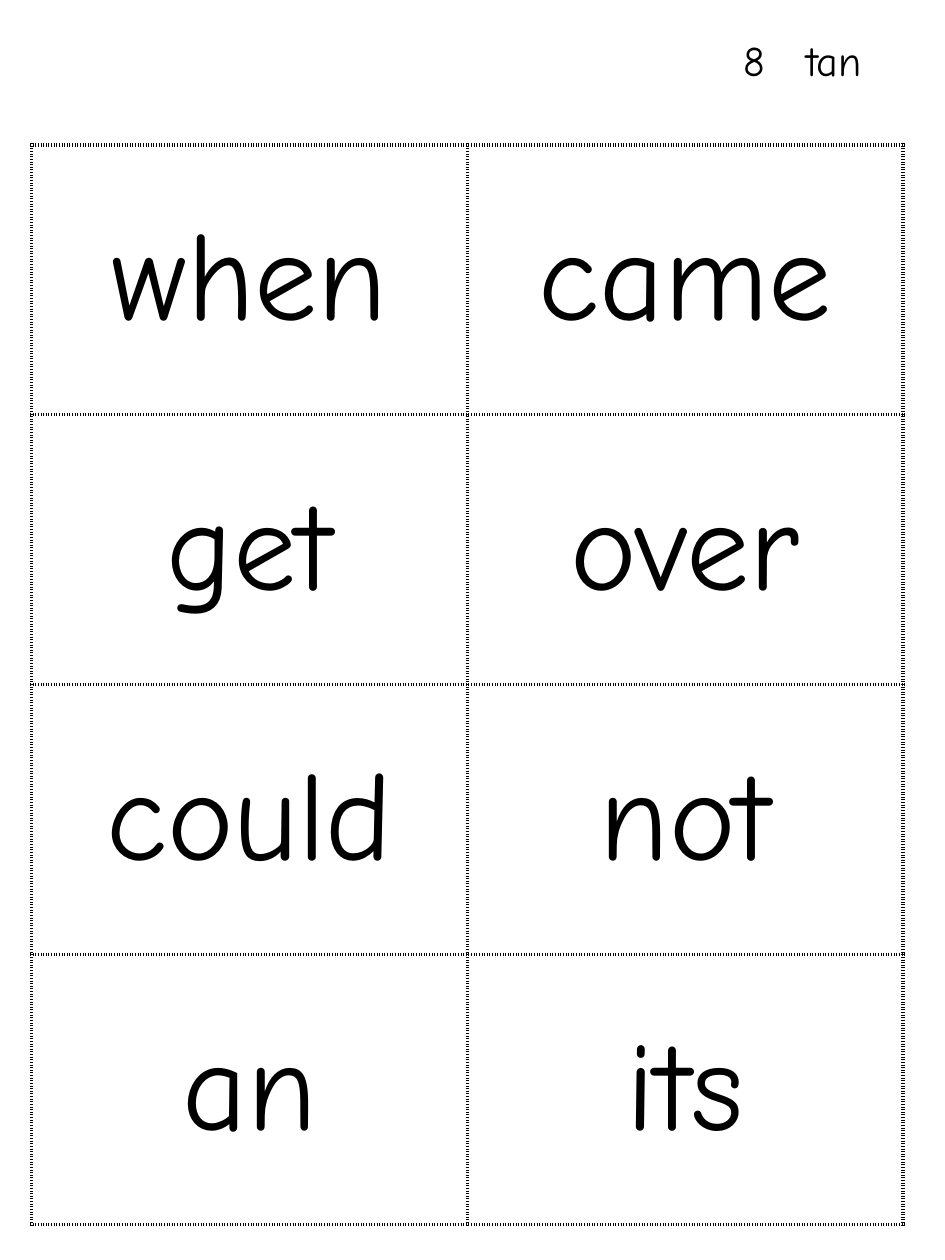
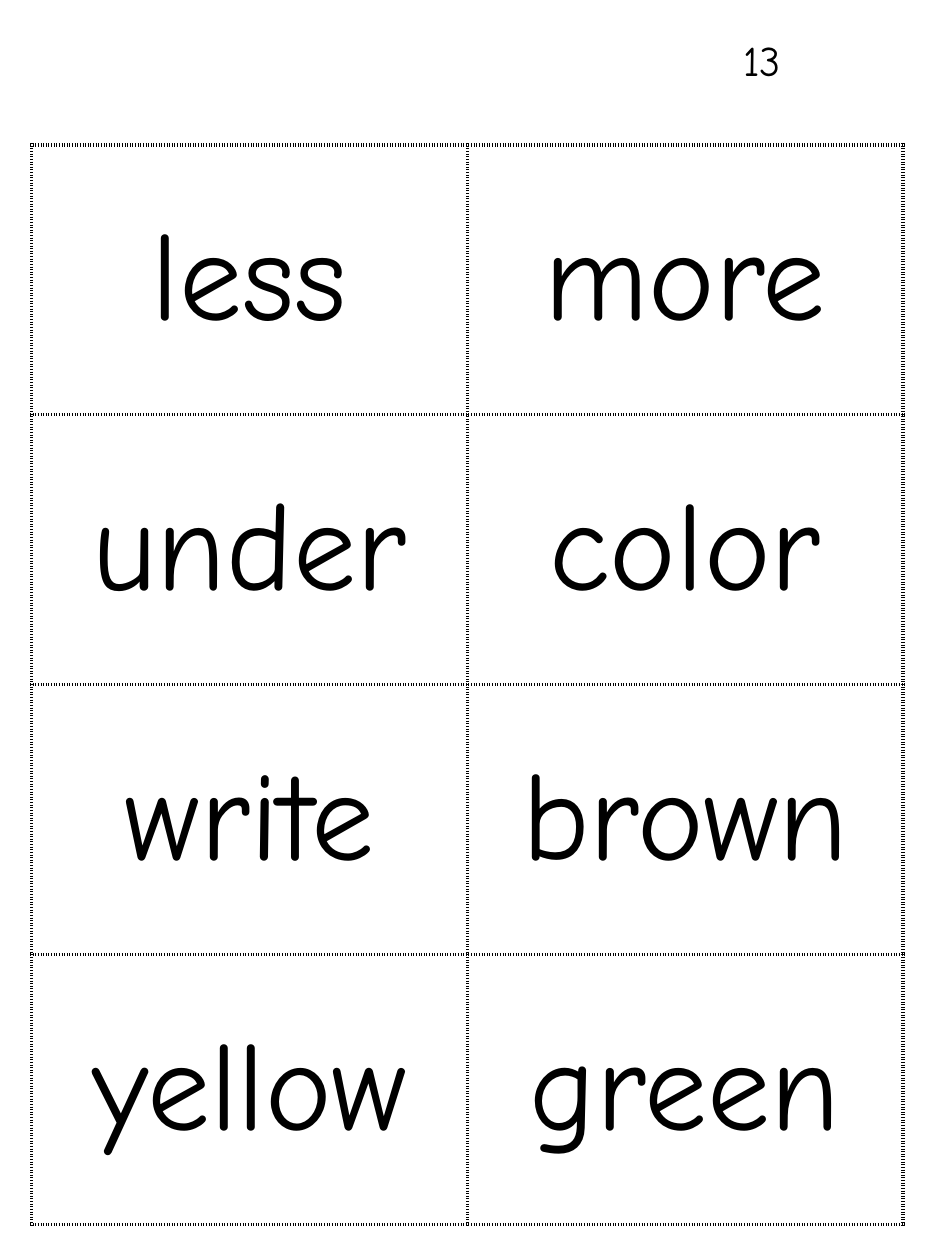
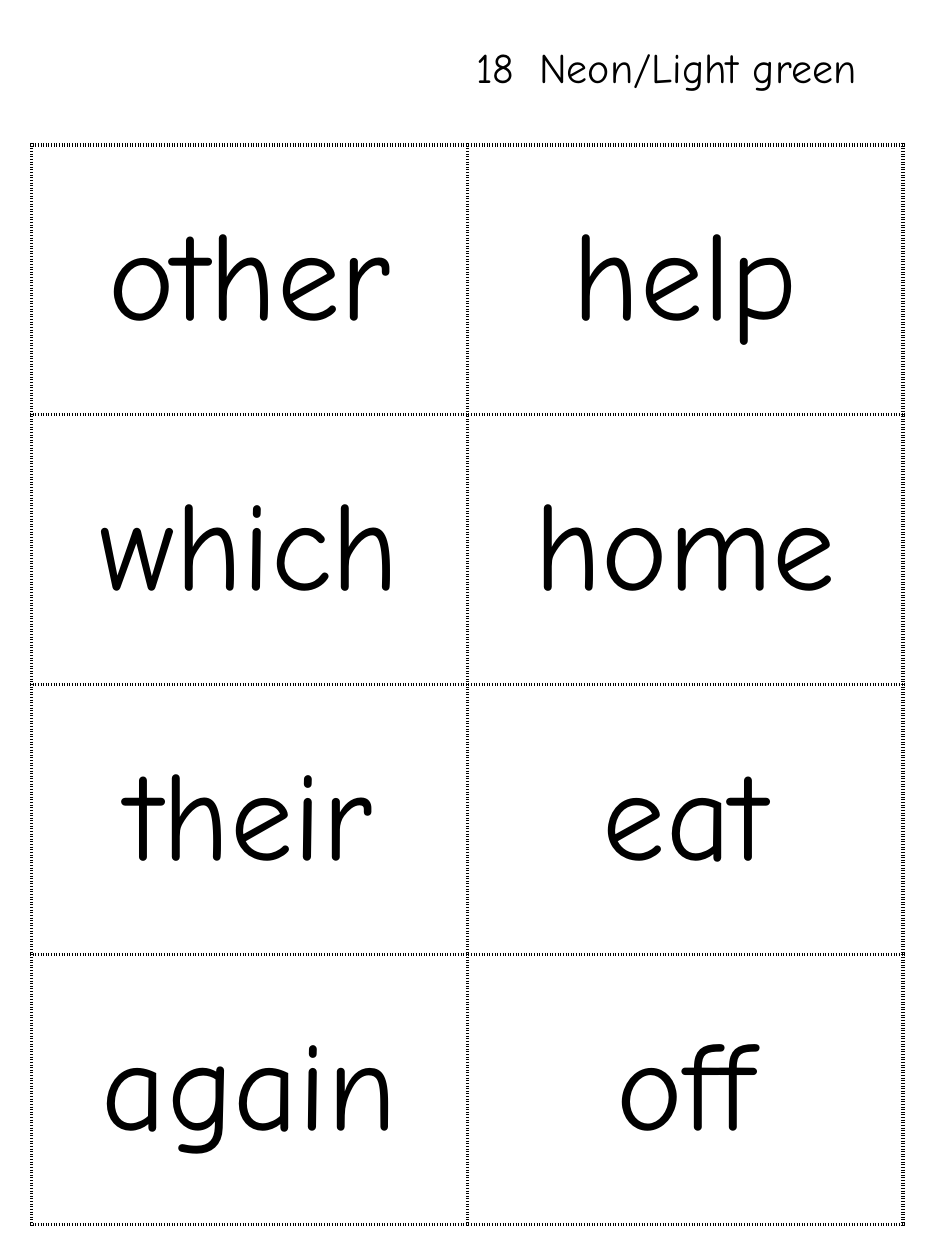
"""Build three printable sheets of sight-word cards, eight words to a sheet."""
from lxml import etree
from pptx import Presentation
from pptx.dml.color import RGBColor
from pptx.enum.text import MSO_ANCHOR, MSO_AUTO_SIZE, PP_ALIGN
from pptx.oxml.ns import qn
from pptx.util import Cm, Pt

CENTER = PP_ALIGN.CENTER
MIDDLE = MSO_ANCHOR.MIDDLE
FIT_SHAPE = MSO_AUTO_SIZE.SHAPE_TO_FIT_TEXT

FONT = "Comic Neue"
BLACK = "000000"
WORD_SIZE = 72
LABEL_SIZE = 24
BORDER_WIDTH = Pt(2.25)
ROWS, COLUMNS = 4, 2
CARD_WIDTH, CARD_HEIGHT = Cm(8.78), Cm(5.44)
GRID_LEFT, GRID_TOP = Cm(0.64), Cm(2.92)
LABEL_HEIGHT = Cm(1.27)

SHEETS = [
    ("8\ttan", 14.73, 0.58, 3.07,
     ["when", "came", "get", "over", "could", "not", "an", "its"]),
    ("13", 14.73, 0.58, 1.42,
     ["less", "more", "under", "color", "write", "brown", "yellow", "green"]),
    ("18\tNeon/Light green", 9.35, 0.71, 8.84,
     ["other", "help", "which", "home", "their", "eat", "again", "off"]),
]


def style_text(paragraph, size, color):
    """Set the shared typeface with a size and a hex colour."""
    paragraph.font.name = FONT
    paragraph.font.size = Pt(size)
    paragraph.font.color.rgb = RGBColor.from_string(color)


def add_dotted_borders(cell, color):
    """Draw a dotted line on all four sides of a cell."""
    properties = cell._tc.get_or_add_tcPr()
    for position, side in enumerate(("lnL", "lnR", "lnT", "lnB")):
        line = etree.Element(qn(f"a:{side}"), w=str(BORDER_WIDTH))
        fill = etree.SubElement(line, qn("a:solidFill"))
        etree.SubElement(fill, qn("a:srgbClr"), val=color)
        etree.SubElement(line, qn("a:prstDash"), val="sysDot")
        properties.insert(position, line)


presentation = Presentation()
presentation.slide_width = Cm(19.05)
presentation.slide_height = Cm(25.4)
blank_layout = presentation.slide_layouts[6]

for label, label_left, label_top, label_width, words in SHEETS:
    slide = presentation.slides.add_slide(blank_layout)

    table = slide.shapes.add_table(
        ROWS, COLUMNS, GRID_LEFT, GRID_TOP,
        CARD_WIDTH * COLUMNS, CARD_HEIGHT * ROWS).table
    table.first_row = False
    table.horz_banding = False
    for cell, word in zip(table.iter_cells(), words):
        cell.text = word
        cell.vertical_anchor = MIDDLE
        cell.fill.background()
        add_dotted_borders(cell, BLACK)
        paragraph = cell.text_frame.paragraphs[0]
        paragraph.alignment = CENTER
        style_text(paragraph, WORD_SIZE, BLACK)

    label_box = slide.shapes.add_textbox(
        Cm(label_left), Cm(label_top), Cm(label_width), LABEL_HEIGHT)
    label_frame = label_box.text_frame
    label_frame.word_wrap = False
    label_frame.auto_size = FIT_SHAPE
    label_frame.text = label
    style_text(label_frame.paragraphs[0], LABEL_SIZE, BLACK)

presentation.save("out.pptx")
